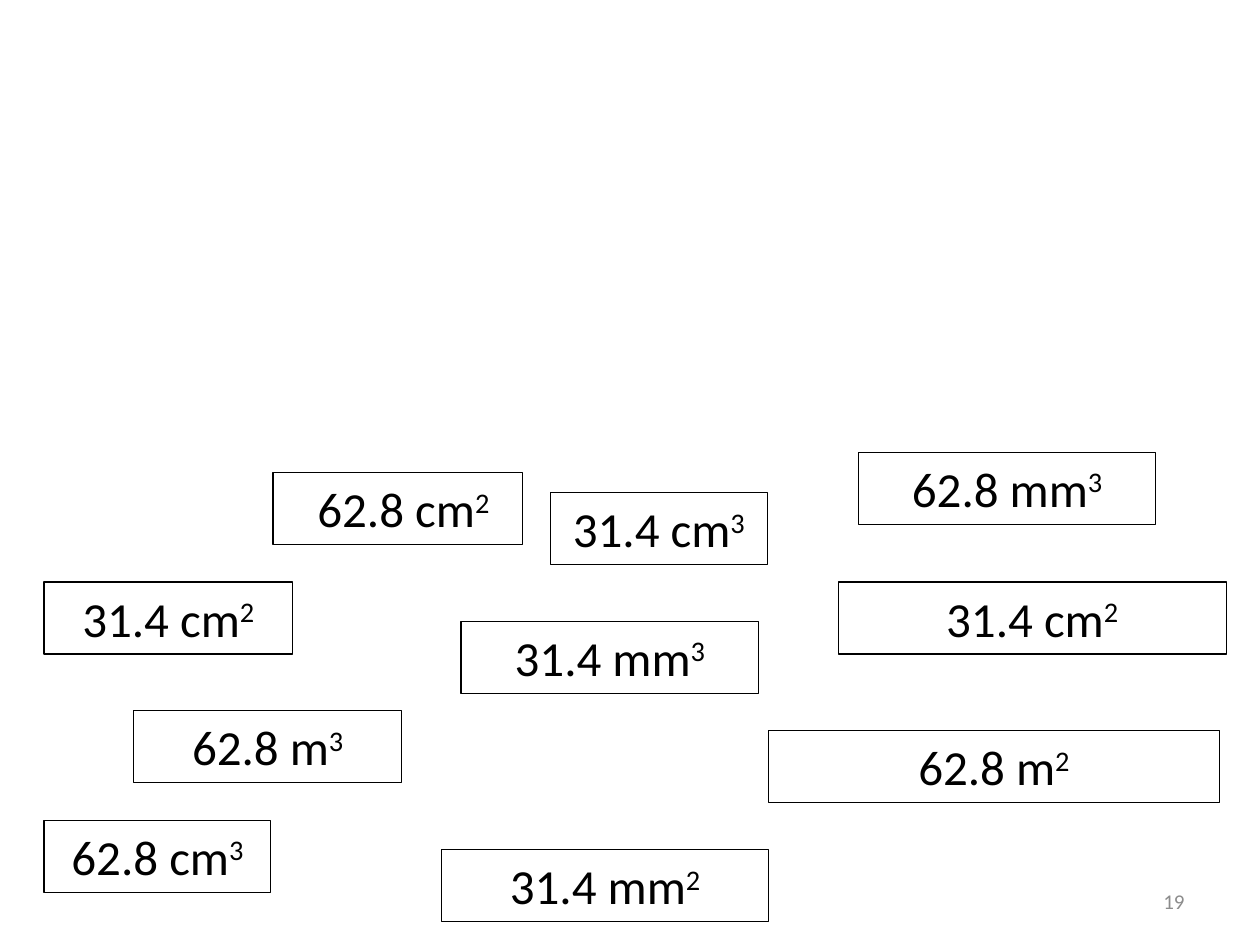
from pptx import Presentation
from pptx.dml.color import RGBColor
from pptx.enum.shapes import MSO_SHAPE as Shape
from pptx.enum.text import MSO_ANCHOR as Anchor, MSO_AUTO_SIZE as AutoSize, PP_ALIGN as Align
from pptx.util import Pt

COLORS = {"ink": "000000", "paper": "FFFFFF", "muted": "8C8C8C"}
FONT = "Calibri"
CARD_HEIGHT = 41.2
CARDS = [
    ("62.8 cm", "3", 25.2, 468.7, 129.6),
    (" 62.8 cm", "2", 156, 270, 142.8),
    ("31.4 cm", "2", 479, 332.5, 221.7),
    ("31.4 cm", "2", 25.2, 332.5, 142),
    ("31.4 mm", "2", 252.2, 485.5, 187.2),
    ("62.8 mm", "3", 490.5, 258.5, 170),
    ("31.4 mm", "3", 263.5, 355, 170),
    ("62.8 m", "2", 439, 417.5, 258),
    ("31.4 cm", "3", 314.5, 281.5, 124),
    ("62.8 m", "3", 76.5, 406, 153),
]
FILLED_CARD = "62.8 mm"
PAGE_NUMBER = "19"


def write(para, text, size=28, color="ink", align=Align.CENTER, raised=False):
    para.alignment = align
    span = para.add_run()
    span.text = text
    span.font.name = FONT
    span.font.size = Pt(size)
    span.font.color.rgb = RGBColor.from_string(COLORS[color])
    if raised:
        span.font._element.set("baseline", "30000")


def add_card(page, amount, power, left, top, width):
    filled = amount == FILLED_CARD
    box = page.shapes.add_shape(
        Shape.RECTANGLE, Pt(left), Pt(top), Pt(width), Pt(CARD_HEIGHT))
    box.shadow.inherit = False
    if filled:
        box.fill.solid()
        box.fill.fore_color.rgb = RGBColor.from_string(COLORS["paper"])
    else:
        box.fill.background()
    box.line.color.rgb = RGBColor.from_string(COLORS["ink"])
    box.line.width = Pt(0.5 if filled else 0.75)
    frame = box.text_frame
    frame.word_wrap = True
    frame.auto_size = AutoSize.SHAPE_TO_FIT_TEXT
    frame.vertical_anchor = Anchor.TOP
    para = frame.paragraphs[0]
    write(para, amount)
    write(para, power, raised=True)


def main():
    deck = Presentation()
    deck.slide_width, deck.slide_height = Pt(720), Pt(540)
    page = deck.slides.add_slide(deck.slide_layouts[6])
    for card in CARDS:
        add_card(page, *card)
    number = page.shapes.add_textbox(Pt(516), Pt(500.5), Pt(168), Pt(28.8))
    frame = number.text_frame
    frame.word_wrap = True
    frame.vertical_anchor = Anchor.MIDDLE
    write(frame.paragraphs[0], PAGE_NUMBER, size=12, color="muted", align=Align.RIGHT)
    deck.save("out.pptx")


if __name__ == "__main__":
    main()
